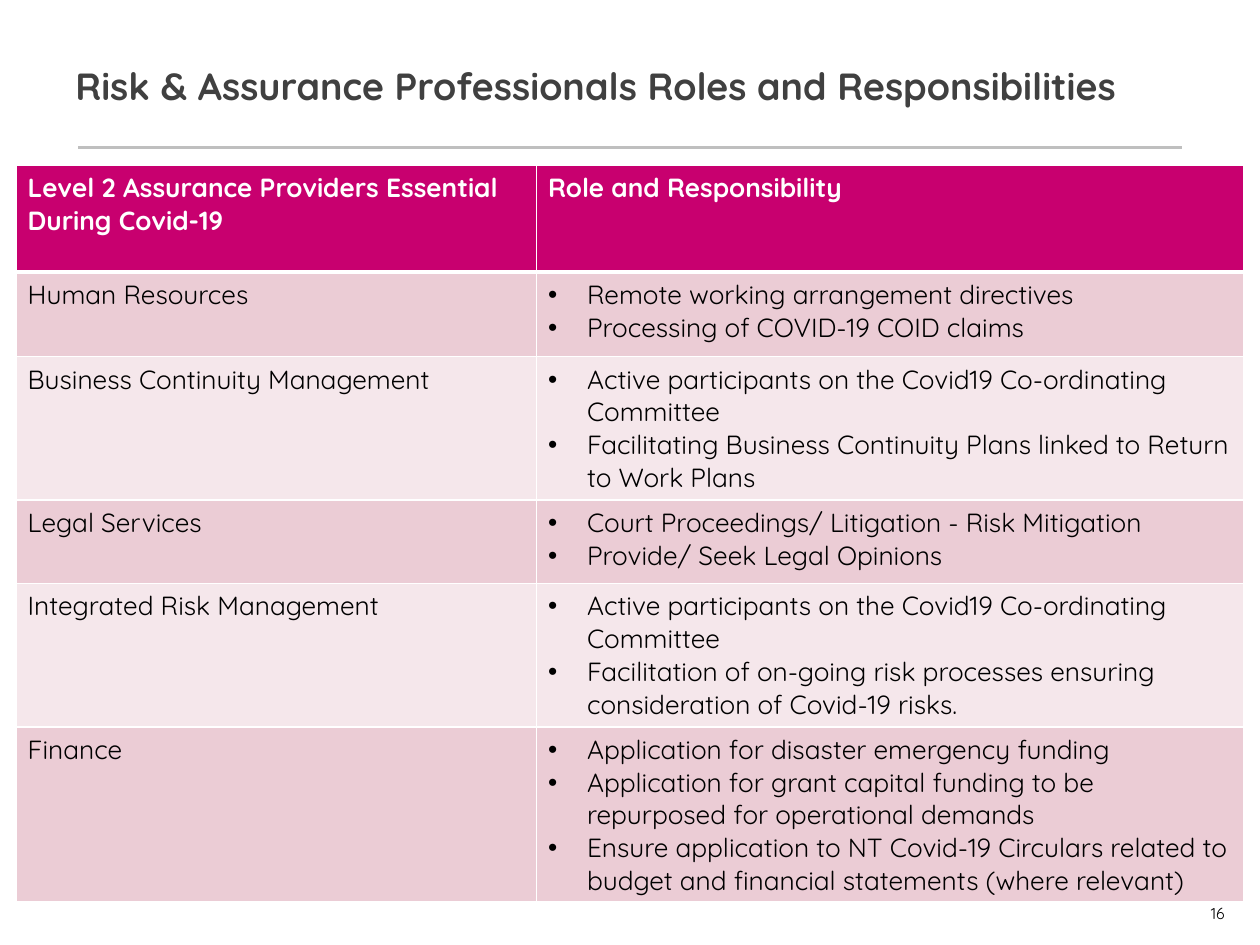
from lxml import etree
from pptx import Presentation
from pptx import util as u
from pptx.dml.color import RGBColor
from pptx.enum import shapes, text
from pptx.oxml import ns

COLOURS = {"title": "404040", "rule": "BFBFBF", "header": "C8006F", "odd": "EBCCD5",
           "even": "F5E7EB", "white": "FFFFFF", "black": "000000"}
COLUMNS = [4.13, 5.61]
ROWS = [0.85, 0.67, 1.14, 0.66, 1.14, 1.39]
HEADINGS = ["Level 2 Assurance Providers Essential During Covid-19", "Role and Responsibility"]
COMMITTEE = "Active participants on the Covid19 Co-ordinating Committee"
PROVIDERS = {
    "Human Resources": [
        "Remote working arrangement directives",
        "Processing of COVID-19 COID claims"],
    "Business Continuity Management": [
        COMMITTEE,
        "Facilitating Business Continuity Plans linked to Return to Work Plans"],
    "Legal Services": [
        "Court Proceedings/ Litigation - Risk Mitigation",
        "Provide/ Seek Legal Opinions"],
    "Integrated Risk Management": [
        COMMITTEE,
        "Facilitation of on-going risk processes ensuring consideration of Covid-19 risks."],
    "Finance": [
        "Application for disaster emergency funding",
        "Application for grant capital funding to be repurposed for operational demands",
        "Ensure application to NT Covid-19 Circulars related to budget and financial "
        "statements (where relevant)"],
}


def write(frame, lines, size, colour, bold=False, bullet=False, align=text.PP_ALIGN.LEFT):
    """Fill a text frame with one paragraph per line."""
    for index, line in enumerate(lines):
        para = frame.add_paragraph() if index else frame.paragraphs[0]
        para.alignment = align
        if bullet:
            props = para._p.get_or_add_pPr()
            props.set("marL", str(u.Inches(0.31)))
            props.set("indent", str(-u.Inches(0.31)))
            etree.SubElement(props, ns.qn("a:buFont"), typeface="Arial")
            etree.SubElement(props, ns.qn("a:buChar"), char="•")
        span = para.add_run()
        span.text = line
        for name, value in {"name": "Quicksand", "size": u.Pt(size), "bold": bold}.items():
            setattr(span.font, name, value)
        span.font.color.rgb = RGBColor.from_string(COLOURS[colour])


def border(cell, widths):
    """Draw white cell borders, given widths in points by edge."""
    props = cell._tc.get_or_add_tcPr()
    for index, (edge, width) in enumerate(widths.items()):
        line = etree.Element(ns.qn(f"a:ln{edge}"), w=str(u.Pt(width)))
        fill = etree.SubElement(line, ns.qn("a:solidFill"))
        etree.SubElement(fill, ns.qn("a:srgbClr"), val=COLOURS["white"])
        props.insert(index, line)


deck = Presentation()
deck.slide_width, deck.slide_height = u.Inches(10), u.Inches(7.5)
page = deck.slides.add_slide(deck.slide_layouts[6])

rule = page.shapes.add_connector(shapes.MSO_CONNECTOR.STRAIGHT, u.Inches(0.62), u.Inches(1.17),
                                 u.Inches(9.38), u.Inches(1.17))
rule.line.width = u.Pt(2)
rule.line.color.rgb = RGBColor.from_string(COLOURS["rule"])
etree.SubElement(rule._element.spPr, ns.qn("a:effectLst"))

title = page.shapes.add_textbox(*map(u.Inches, (0.5, 0.3, 9, 0.76))).text_frame
for name, value in {"word_wrap": True, "vertical_anchor": text.MSO_ANCHOR.MIDDLE}.items():
    setattr(title, name, value)
write(title, ["Risk & Assurance Professionals Roles and Responsibilities"], 21.6, "title", bold=True)

table = page.shapes.add_table(len(ROWS), len(COLUMNS), u.Inches(0.13), u.Inches(1.31),
                              u.Inches(sum(COLUMNS)), u.Inches(sum(ROWS))).table
table.first_row = table.horz_banding = False
for column, width in zip(table.columns, COLUMNS):
    column.width = u.Inches(width)
for row, height in zip(table.rows, ROWS):
    row.height = u.Inches(height)

contents = [[[heading] for heading in HEADINGS]]
contents += [[[provider], duties] for provider, duties in PROVIDERS.items()]
for r, entries in enumerate(contents):
    header = r == 0
    shade = "header" if header else ("odd" if r % 2 else "even")
    for c, lines in enumerate(entries):
        cell = table.cell(r, c)
        cell.margin_left = cell.margin_right = u.Inches(0.09)
        cell.fill.solid()
        cell.fill.fore_color.rgb = RGBColor.from_string(COLOURS[shade])
        border(cell, {"L": 1, "R": 1, "T": 3 if r == 1 else 1, "B": 3 if header else 1})
        write(cell.text_frame, lines, 15, "white" if header else "black",
              bold=header, bullet=c == 1 and not header)

number = page.shapes.add_textbox(*map(u.Inches, (9.16, 7.12, 0.56, 0.25))).text_frame
for name, value in {"word_wrap": True, "vertical_anchor": text.MSO_ANCHOR.MIDDLE,
                    "margin_left": u.Inches(0.08), "margin_right": 0,
                    "margin_top": 0, "margin_bottom": 0}.items():
    setattr(number, name, value)
write(number, ["16"], 9, "black", align=text.PP_ALIGN.RIGHT)

deck.save("out.pptx")
